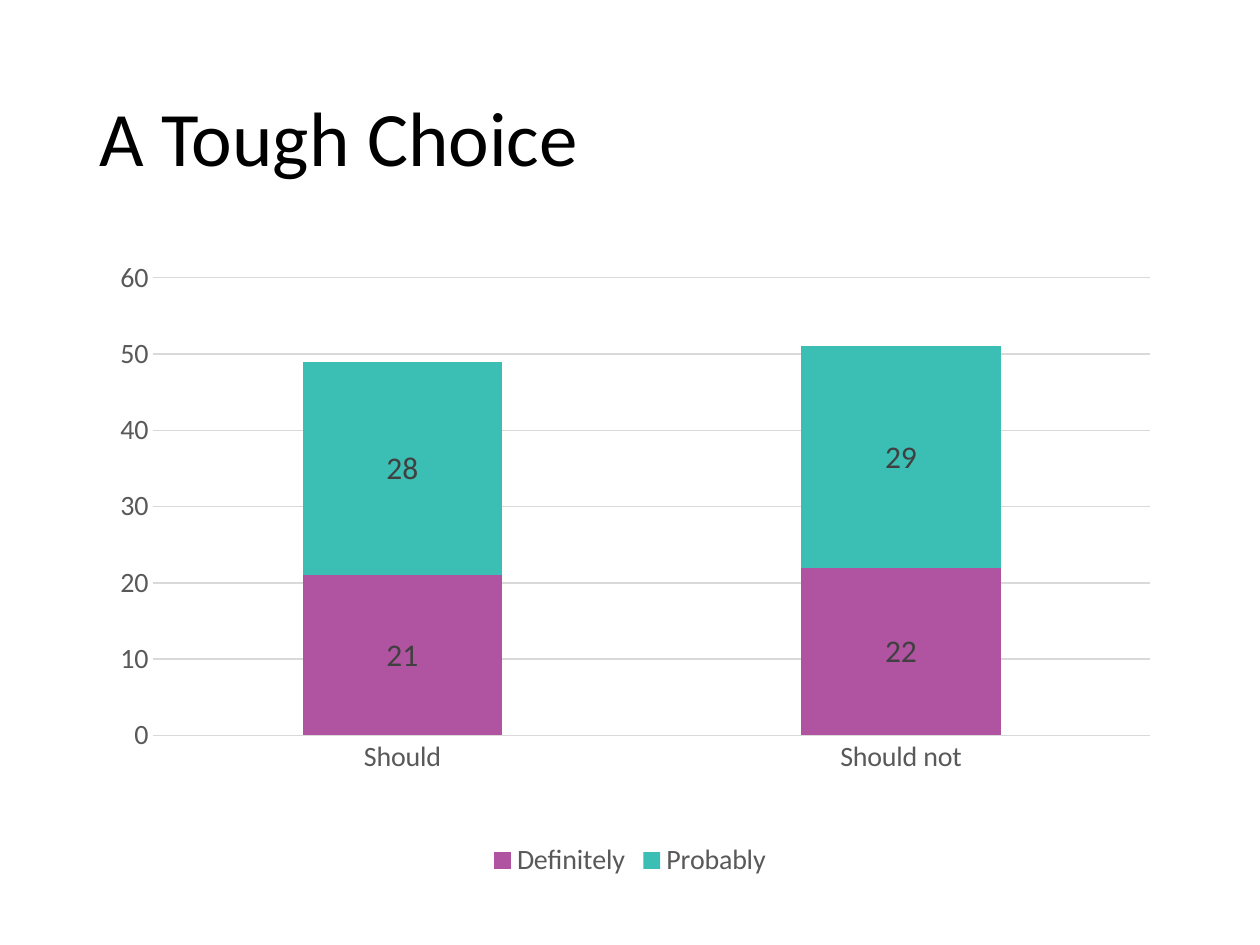
import pptx
import pptx.chart.data
import pptx.dml.color
import pptx.enum.chart
import pptx.enum.text
import pptx.oxml
import pptx.oxml.ns
import pptx.util
from pptx.util import Inches

COLORS = {
    "title": "000000",
    "axis_text": "595959",
    "label": "404040",
    "grid": "D9D9D9",
    "Definitely": "B053A1",
    "Probably": "3BBEB4",
}
CATEGORIES = ["Should", "Should not"]
ANSWERS = {"Definitely": [21, 22], "Probably": [28, 29]}
LEFT, WIDTH = Inches(0.69), Inches(8.62)


class SlideBuilder:
    def __init__(self, slide, font_name="Calibri"):
        self.slide = slide
        self.font_name = font_name

    def color(self, name):
        return pptx.dml.color.RGBColor.from_string(COLORS[name])

    def style_font(self, font, size, color):
        font.name = self.font_name
        font.size = pptx.util.Pt(size)
        font.color.rgb = self.color(color)

    def style_line(self, line):
        line.color.rgb = self.color("grid")
        line.width = pptx.util.Pt(0.75)

    def add_title(self, text, left, top, width, height):
        frame = self.slide.shapes.add_textbox(left, top, width, height).text_frame
        frame.word_wrap = True
        frame.vertical_anchor = pptx.enum.text.MSO_ANCHOR.MIDDLE
        paragraph = frame.paragraphs[0]
        paragraph.text = text
        paragraph.line_spacing = 0.9
        self.style_font(paragraph.font, 44, "title")

    def add_stacked_chart(self, categories, series_values, left, top, width, height):
        data = pptx.chart.data.CategoryChartData()
        data.categories = categories
        for name, values in series_values.items():
            data.add_series(name, values)
        chart = self.slide.shapes.add_chart(
            pptx.enum.chart.XL_CHART_TYPE.COLUMN_STACKED,
            left, top, width, height, data,
        ).chart
        chart.has_title = False
        self.style_font(chart.font, 10, "title")
        self.style_axes(chart)
        self.style_series(chart.plots[0])
        chart.has_legend = True
        chart.legend.position = pptx.enum.chart.XL_LEGEND_POSITION.BOTTOM
        chart.legend.include_in_layout = False
        self.style_font(chart.legend.font, 16, "axis_text")
        self.place_plot(chart, x=0.061, y=0.041, w=0.918, h=0.725)

    def style_axes(self, chart):
        for axis in (chart.category_axis, chart.value_axis):
            axis.major_tick_mark = pptx.enum.chart.XL_TICK_MARK.NONE
            axis.minor_tick_mark = pptx.enum.chart.XL_TICK_MARK.NONE
            self.style_font(axis.tick_labels.font, 16, "axis_text")
        self.style_line(chart.category_axis.format.line)
        chart.value_axis.format.line.fill.background()
        chart.value_axis.has_major_gridlines = True
        self.style_line(chart.value_axis.major_gridlines.format.line)

    def style_series(self, plot):
        plot.gap_width = 150
        plot.overlap = 100
        plot.vary_by_categories = False
        for series in plot.series:
            series.format.fill.solid()
            series.format.fill.fore_color.rgb = self.color(series.name)
            labels = series.data_labels
            labels.show_value = True
            labels.position = pptx.enum.chart.XL_LABEL_POSITION.CENTER
            self.style_font(labels.font, 18, "label")

    def place_plot(self, chart, **fractions):
        """Fix the inner plot area, in fractions of the chart's size."""
        modes = '<c:xMode val="edge"/><c:yMode val="edge"/>'
        places = "".join(f'<c:{key} val="{value}"/>' for key, value in fractions.items())
        layout = pptx.oxml.parse_xml(
            f'<c:layout {pptx.oxml.ns.nsdecls("c")}><c:manualLayout>'
            f'<c:layoutTarget val="inner"/>{modes}{places}'
            "</c:manualLayout></c:layout>"
        )
        plot_area = chart.element.chart.plotArea
        for old_layout in plot_area.findall(pptx.oxml.ns.qn("c:layout")):
            plot_area.remove(old_layout)
        plot_area.insert(0, layout)


def main():
    presentation = pptx.Presentation()
    presentation.slide_width = Inches(10)
    presentation.slide_height = Inches(7.5)
    slide = presentation.slides.add_slide(presentation.slide_layouts[6])
    builder = SlideBuilder(slide)
    builder.add_title("A Tough Choice", LEFT, Inches(0.4), WIDTH, Inches(1.45))
    builder.add_stacked_chart(CATEGORIES, ANSWERS, LEFT, Inches(2), WIDTH, Inches(5.01))
    presentation.save("out.pptx")


if __name__ == "__main__":
    main()
